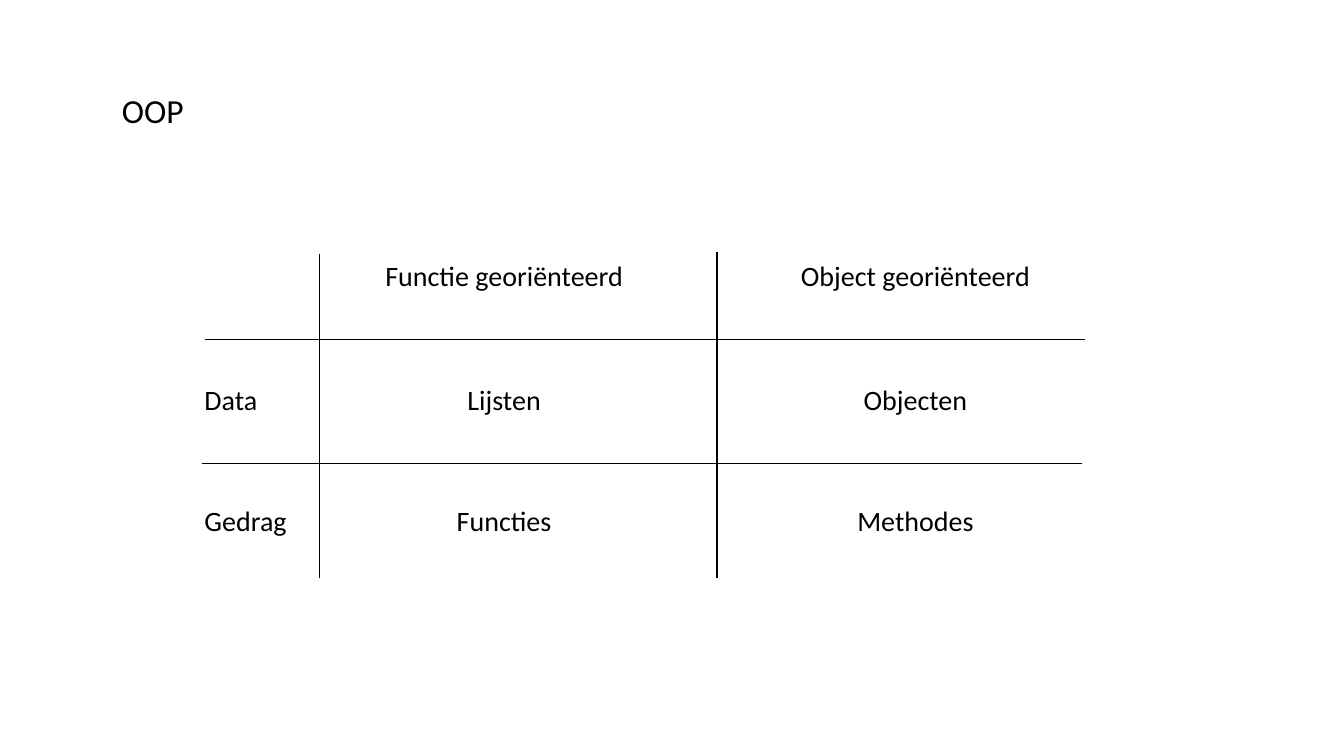
from lxml.etree import SubElement
from pptx import Presentation
from pptx.dml.color import RGBColor
from pptx.enum.shapes import MSO_CONNECTOR
from pptx.enum.text import MSO_ANCHOR, MSO_AUTO_SIZE, PP_ALIGN
from pptx.oxml.ns import qn
from pptx.util import Inches, Pt

FONT = "Calibri"
BLACK = "000000"
ROW_HEIGHT = 0.44
LABEL_LEFT = 0
COLUMN_CENTERS = (3.07, 7.15)
ROWS = (
    (0.02, (("Functie georiënteerd", 2.59), ("Object georiënteerd", 2.5))),
    (1.25, (("Lijsten", 0.94), ("Objecten", 1.24))),
    (2.45, (("Functies", 1.16), ("Methodes", 1.37))),
)
ROW_LABELS = (("Data", 0.73, 1.25), ("Gedrag", 1.03, 2.45))
RULES = (
    (5.18, 0, 5.18, 3.23),
    (0.1, 0.87, 8.83, 0.87),
    (0.07, 2.1, 8.8, 2.1),
    (1.24, 0.02, 1.24, 3.23),
)


def color(hex_string):
    """Return the colour for a hex string."""
    return RGBColor.from_string(hex_string)


def write_text(shape, text, size, alignment):
    """Write one line of text into a shape and format it."""
    text_frame = shape.text_frame
    text_frame.text = text
    text_frame.word_wrap = False
    text_frame.auto_size = MSO_AUTO_SIZE.NONE
    text_frame.vertical_anchor = MSO_ANCHOR.TOP
    paragraph = text_frame.paragraphs[0]
    paragraph.alignment = alignment
    font = paragraph.runs[0].font
    font.name, font.size = FONT, Pt(size)
    font.color.rgb = color(BLACK)


def add_title(slide, left, top, width, height):
    """Place the slide title in the given box."""
    title = slide.shapes.title
    title.left, title.top = Inches(left), Inches(top)
    title.width, title.height = Inches(width), Inches(height)
    write_text(title, "OOP", 24, PP_ALIGN.LEFT)


def add_label(slide, text, left, top, width, alignment):
    """Add one grid label."""
    box = slide.shapes.add_textbox(
        Inches(left), Inches(top), Inches(width), Inches(ROW_HEIGHT)
    )
    write_text(box, text, 20, alignment)


def add_rule(slide, x1, y1, x2, y2):
    """Draw one thin black line without a shadow."""
    rule = slide.shapes.add_connector(
        MSO_CONNECTOR.STRAIGHT, Inches(x1), Inches(y1), Inches(x2), Inches(y2)
    )
    rule.line.color.rgb = color(BLACK)
    rule.line.width = Pt(1)
    SubElement(rule._element.spPr, qn("a:effectLst"))


def add_comparison(slide, left, top):
    """Place the comparison grid with its top left corner at the given point."""
    for row_top, cells in ROWS:
        for center, (text, width) in zip(COLUMN_CENTERS, cells):
            add_label(slide, text, left + center - width / 2, top + row_top,
                      width, PP_ALIGN.CENTER)
    for text, width, row_top in ROW_LABELS:
        add_label(slide, text, left + LABEL_LEFT, top + row_top, width, PP_ALIGN.LEFT)
    for x1, y1, x2, y2 in RULES:
        add_rule(slide, left + x1, top + y1, left + x2, top + y2)


def main():
    """Build and save the presentation."""
    presentation = Presentation()
    presentation.slide_width = Inches(13.33)
    presentation.slide_height = Inches(7.5)
    slide = presentation.slides.add_slide(presentation.slide_layouts[5])
    add_title(slide, 1.11, 0.84, 0.82, 0.5)
    add_comparison(slide, 1.93, 2.5)
    presentation.save("out.pptx")


if __name__ == "__main__":
    main()
